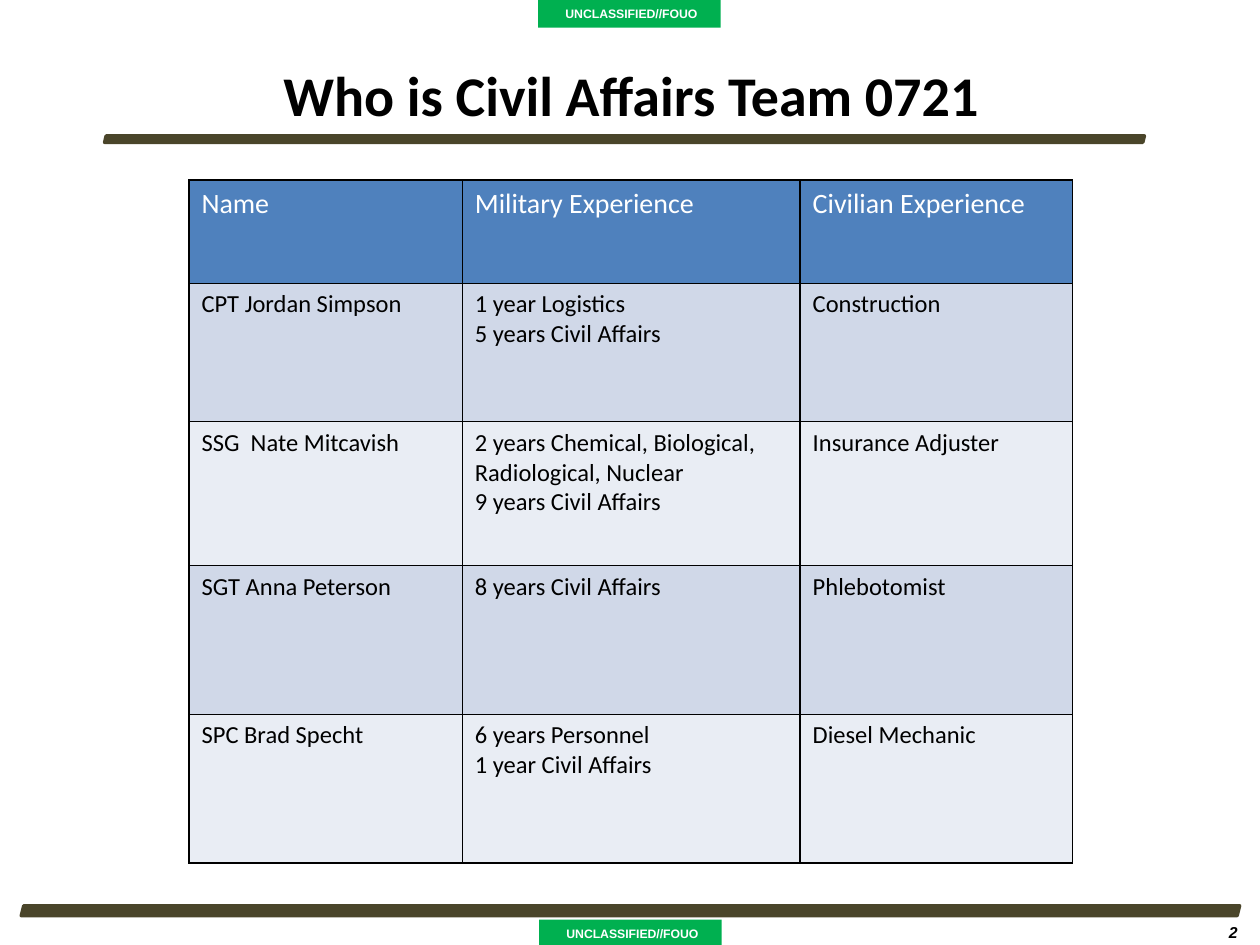
import pptx
import pptx.util
import pptx.dml.color
import pptx.enum.shapes
import pptx.enum.text
import pptx.oxml
import pptx.oxml.ns
from dataclasses import dataclass

Cm = pptx.util.Cm
Pt = pptx.util.Pt
RGBColor = pptx.dml.color.RGBColor
Kind = pptx.enum.shapes.MSO_SHAPE
Align = pptx.enum.text.PP_ALIGN
Anchor = pptx.enum.text.MSO_ANCHOR

BLACK = RGBColor(0x00, 0x00, 0x00)
WHITE = RGBColor(0xFF, 0xFF, 0xFF)
OLIVE = RGBColor(0x4A, 0x45, 0x2A)
GREEN = RGBColor(0x00, 0xB0, 0x50)
BLUE = RGBColor(0x4F, 0x81, 0xBD)
BANDS = RGBColor(0xD0, 0xD8, 0xE8), RGBColor(0xE9, 0xED, 0xF4)


@dataclass
class Box:
    left: float
    top: float
    width: float
    height: float

    def place(self) -> tuple:
        return Cm(self.left), Cm(self.top), Cm(self.width), Cm(self.height)


@dataclass
class Member:
    name: str
    army: str
    civil: str


RULES = [Box(0.43, 18.26, 24.56, 0.2), Box(2.11, 2.74, 20.96, 0.13)]
MARKS = [Box(10.87, 18.54, 3.68, 0.56), Box(10.85, 0, 3.68, 0.56)]
WIDTHS = [5.51, 6.81, 5.49]
HEIGHTS = [2.08, 2.79, 2.9, 3, 3]
TEAM = [
    Member("CPT Jordan Simpson", "1 year Logistics\n5 years Civil Affairs",
           "Construction"),
    Member("SSG  Nate Mitcavish",
           "2 years Chemical, Biological, Radiological, Nuclear\n"
           "9 years Civil Affairs", "Insurance Adjuster"),
    Member("SGT Anna Peterson", "8 years Civil Affairs", "Phlebotomist"),
    Member("SPC Brad Specht", "6 years Personnel\n1 year Civil Affairs",
           "Diesel Mechanic"),
]


def write(frame, text: str, face: str, size: float, color: RGBColor,
          align=Align.LEFT, bold: bool = False, slant: bool = False) -> None:
    frame.text = text
    frame.word_wrap = True
    for para in frame.paragraphs:
        para.alignment = align
        font = para.font
        font.name, font.size = face, Pt(size)
        font.bold, font.italic = bold, slant
        font.color.rgb = color


def add_rule(slide, box: Box) -> None:
    rule = slide.shapes.add_shape(Kind.PARALLELOGRAM, *box.place())
    rule.shadow.inherit = False
    rule.fill.solid()
    rule.fill.fore_color.rgb = OLIVE
    rule.line.color.rgb = OLIVE
    rule.line.width = Pt(2)


def add_mark(slide, box: Box) -> None:
    mark = slide.shapes.add_shape(Kind.RECTANGLE, *box.place())
    mark.shadow.inherit = False
    mark.fill.solid()
    mark.fill.fore_color.rgb = GREEN
    mark.line.fill.background()
    frame = mark.text_frame
    frame.margin_left = Cm(0.08)
    frame.margin_right = frame.margin_top = frame.margin_bottom = 0
    frame.vertical_anchor = Anchor.MIDDLE
    write(frame, "UNCLASSIFIED//FOUO", "Arial", 7, WHITE, Align.CENTER, True)


def edge(cell) -> None:
    """Draw a thin black border on all four sides."""
    props = cell._tc.get_or_add_tcPr()
    for spot, side in enumerate(("lnL", "lnR", "lnT", "lnB")):
        props.insert(spot, pptx.oxml.parse_xml(
            f'<a:{side} {pptx.oxml.ns.nsdecls("a")} w="{Pt(1)}"><a:solidFill>'
            f'<a:srgbClr val="{BLACK}"/></a:solidFill></a:{side}>'))


def add_roster(slide, box: Box) -> None:
    rows = [("Name", "Military Experience", "Civilian Experience")]
    rows += [(one.name, one.army, one.civil) for one in TEAM]
    table = slide.shapes.add_table(
        len(rows), len(WIDTHS), *box.place()).table
    for col, width in zip(table.columns, WIDTHS):
        col.width = Cm(width)
    for at, (row, height) in enumerate(zip(table.rows, HEIGHTS)):
        row.height = Cm(height)
        head = at == 0
        for cell, text in zip(row.cells, rows[at]):
            cell.fill.solid()
            cell.fill.fore_color.rgb = BLUE if head else BANDS[(at - 1) % 2]
            edge(cell)
            write(cell.text_frame, text, "Calibri", 16 if head else 14,
                  WHITE if head else BLACK)


def main() -> None:
    deck = pptx.Presentation()
    deck.slide_width, deck.slide_height = Cm(25.4), Cm(19.05)
    slide = deck.slides.add_slide(deck.slide_layouts[5])

    # Rules and markings
    for box in RULES:
        add_rule(slide, box)
    for box in MARKS:
        add_mark(slide, box)

    # Page number
    page = slide.shapes.add_textbox(*Box(23.93, 18.47, 1.27, 1.02).place())
    write(page.text_frame, "2", "Arial", 9, BLACK, Align.RIGHT, True, True)

    # Title
    title = slide.shapes.title
    title.left, title.top, title.width, title.height = Box(
        1.3, 1.04, 22.86, 1.7).place()
    title.text_frame.vertical_anchor = Anchor.MIDDLE
    write(title.text_frame, "Who is Civil Affairs Team 0721", "Calibri", 32,
          BLACK, Align.CENTER, True)

    # Team table
    add_roster(slide, Box(3.81, 3.63, sum(WIDTHS), sum(HEIGHTS)))

    deck.save("out.pptx")


if __name__ == "__main__":
    main()
